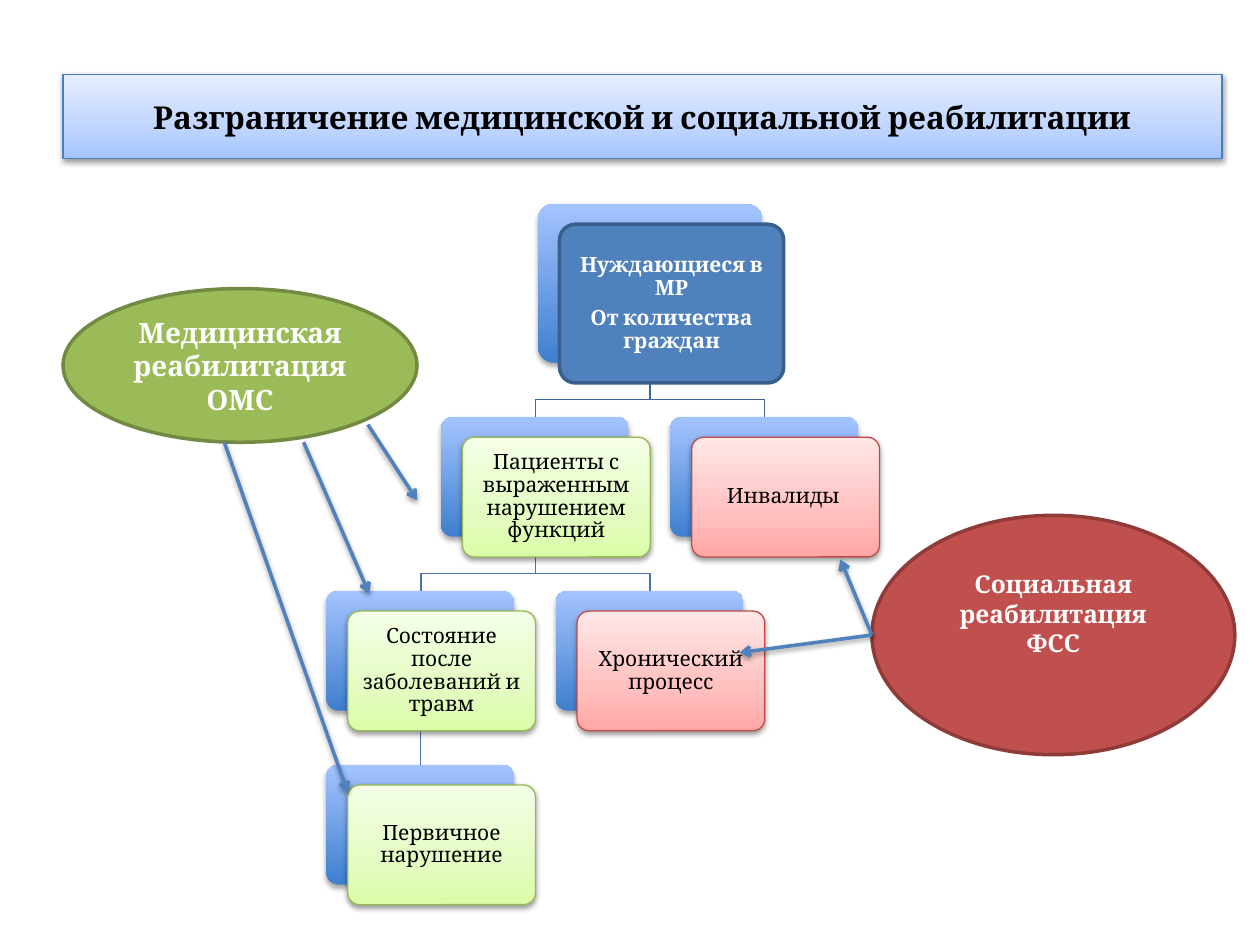
from lxml.etree import SubElement
from pptx import Presentation
from pptx.dml.color import RGBColor
from pptx.enum.shapes import MSO_CONNECTOR, MSO_SHAPE
from pptx.enum.text import MSO_ANCHOR, PP_ALIGN
from pptx.oxml.ns import qn
from pptx.util import Inches, Pt

BLACK = RGBColor(0x00, 0x00, 0x00)
WHITE = RGBColor(0xFF, 0xFF, 0xFF)
BLUE = RGBColor(0x4F, 0x81, 0xBD)
BLUE_EDGE = RGBColor(0x3A, 0x5F, 0x8C)
TITLE_EDGE = RGBColor(0x4B, 0x7E, 0xBC)
TOP_LINK = RGBColor(0x3F, 0x67, 0x97)
LOW_LINK = RGBColor(0x48, 0x75, 0xAC)
GREEN = RGBColor(0x9B, 0xBB, 0x59)
GREEN_EDGE = RGBColor(0x73, 0x8A, 0x42)
GREEN_CARD_EDGE = RGBColor(0x98, 0xB9, 0x55)
RED = RGBColor(0xC0, 0x50, 0x4D)
RED_EDGE = RGBColor(0x8E, 0x3B, 0x39)
RED_CARD_EDGE = RGBColor(0xBF, 0x4C, 0x48)

# Gradients run from bottom to top: (position in percent, colour)
BACK_GRAD = [(0, RGBColor(0x3F, 0x7F, 0xCE)), (100, RGBColor(0xA4, 0xC4, 0xFF))]
TITLE_GRAD = [(0, RGBColor(0xA4, 0xC4, 0xFF)), (35, RGBColor(0xBF, 0xD4, 0xFF)),
              (100, RGBColor(0xE6, 0xEE, 0xFF))]
GREEN_GRAD = [(0, RGBColor(0xDA, 0xFD, 0xA7)), (35, RGBColor(0xE4, 0xFC, 0xC2)),
              (100, RGBColor(0xF5, 0xFF, 0xE7))]
RED_GRAD = [(0, RGBColor(0xFF, 0xA6, 0xA5)), (35, RGBColor(0xFF, 0xC0, 0xBF)),
            (100, RGBColor(0xFF, 0xE7, 0xE7))]

FONT = "Cambria"
ROOT_SIZE, CARD_SIZE = (1.78, 1.26), (1.49, 0.95)
OFFSET_X, OFFSET_Y = 0.17, 0.16
ROW_GAP, ELBOW_DROP = 0.43, 0.29
ROW_1 = 1.62
ROW_2 = ROW_1 + ROOT_SIZE[1] + ROW_GAP
ROW_3 = ROW_2 + CARD_SIZE[1] + ROW_GAP
ROW_4 = ROW_3 + CARD_SIZE[1] + ROW_GAP
CARD_FORMAT = {"line_spacing": 0.9, "space_after": Pt(4.2)}


def set_shadow(sp, alpha=38, dist=1.6):
    spPr = sp.element.spPr
    effects = spPr.find(qn("a:effectLst"))
    if effects is None:
        effects = SubElement(spPr, qn("a:effectLst"))
    shadow = SubElement(effects, qn("a:outerShdw"), blurRad=str(Pt(3.1)),
                        dist=str(Pt(dist)), dir="5400000", rotWithShape="0")
    color = SubElement(shadow, qn("a:srgbClr"), val=str(BLACK))
    SubElement(color, qn("a:alpha"), val=str(alpha * 1000))


def set_gradient(sp, stops):
    sp.fill.gradient()
    sp.fill.gradient_angle = 90
    stop_list = sp.element.spPr.find(qn("a:gradFill")).find(qn("a:gsLst"))
    stop_list.clear()
    for pos, color in stops:
        stop = SubElement(stop_list, qn("a:gs"), pos=str(pos * 1000))
        SubElement(stop, qn("a:srgbClr"), val=str(color))


def add_box(s, kind, box, fill, edge=None, width=0.75):
    sp = s.shapes.add_shape(kind, *map(Inches, box))
    sp.shadow.inherit = False
    if isinstance(fill, list):
        set_gradient(sp, fill)
    else:
        sp.fill.solid()
        sp.fill.fore_color.rgb = fill
    if edge is None:
        sp.line.fill.background()
    else:
        sp.line.color.rgb = edge
        sp.line.width = Pt(width)
    return sp


def add_text(sp, lines, size, color, bold=False, frame=None, para=None):
    tf = sp.text_frame
    frame = {"word_wrap": True, "vertical_anchor": MSO_ANCHOR.MIDDLE, **(frame or {})}
    for name, value in frame.items():
        setattr(tf, name, value)
    for i, line in enumerate(lines):
        p = tf.add_paragraph() if i else tf.paragraphs[0]
        for name, value in {"alignment": PP_ALIGN.CENTER, **(para or {})}.items():
            setattr(p, name, value)
        r = p.add_run()
        r.text = line
        for name, value in {"name": FONT, "size": Pt(size), "bold": bold}.items():
            setattr(r.font, name, value)
        r.font.color.rgb = color


def add_card(s, x, y, size, lines, fill, edge, root=False):
    back = add_box(s, MSO_SHAPE.ROUNDED_RECTANGLE, (x, y, *size), BACK_GRAD)
    set_shadow(back, 35, 1.8)
    front = add_box(s, MSO_SHAPE.ROUNDED_RECTANGLE,
                    (x + OFFSET_X, y + OFFSET_Y, *size), fill, edge, 2 if root else 0.75)
    if not root:
        set_shadow(front)
    for sp in (back, front):
        sp.adjustments[0] = 0.1
    margins = {f"margin_{side}": Inches(0.05) for side in ("left", "right", "top", "bottom")}
    add_text(front, lines, 12, WHITE if root else BLACK, root, margins, CARD_FORMAT)


def add_line(s, start, end, color, width):
    cn = s.shapes.add_connector(MSO_CONNECTOR.STRAIGHT, *map(Inches, (*start, *end)))
    cn.line.color.rgb = color
    cn.line.width = Pt(width)
    SubElement(cn.element.spPr, qn("a:effectLst"))
    return cn


def add_arrow(s, start, end):
    cn = add_line(s, start, end, BLUE, 2)
    SubElement(cn.element.spPr.find(qn("a:ln")), qn("a:tailEnd"), type="arrow")
    set_shadow(cn)


def add_link(s, x1, y1, x2, color):
    y2 = y1 + ROW_GAP
    if x1 == x2:
        add_line(s, (x1, y1), (x2, y2), color, 0.75)
        return
    bend = y1 + ELBOW_DROP
    builder = s.shapes.build_freeform(Inches(x1), Inches(y1))
    points = [(x1, bend), (x2, bend), (x2, y2)]
    builder.add_line_segments([(Inches(x), Inches(y)) for x, y in points], close=False)
    sp = builder.convert_to_shape()
    sp.shadow.inherit = False
    sp.fill.background()
    sp.line.color.rgb = color
    sp.line.width = Pt(0.75)


def main():
    prs = Presentation()
    prs.slide_width, prs.slide_height = Inches(10), Inches(7.5)
    s = prs.slides.add_slide(prs.slide_layouts[6])

    # Tree links
    root_bottom, row_2_bottom, row_3_bottom = (y - ROW_GAP for y in (ROW_2, ROW_3, ROW_4))
    for link in [(5.16, root_bottom, 6.07, TOP_LINK), (5.16, root_bottom, 4.25, TOP_LINK),
                 (4.25, row_2_bottom, 5.16, LOW_LINK), (4.25, row_2_bottom, 3.34, LOW_LINK),
                 (3.34, row_3_bottom, 3.34, LOW_LINK)]:
        add_link(s, *link)

    # Tree cards
    add_card(s, 4.27, ROW_1, ROOT_SIZE, ["Нуждающиеся в МР", "От количества граждан"],
             BLUE, BLUE_EDGE, root=True)
    green, red = (GREEN_GRAD, GREEN_CARD_EDGE), (RED_GRAD, RED_CARD_EDGE)
    for x, y, text, style in [
            (3.5, ROW_2, "Пациенты с выраженным нарушением функций", green),
            (2.59, ROW_3, "Состояние после заболеваний и травм", green),
            (2.59, ROW_4, "Первичное нарушение", green),
            (4.41, ROW_3, "Хронический процесс", red),
            (5.32, ROW_2, "Инвалиды ", red)]:
        add_card(s, x, y, CARD_SIZE, [text], *style)

    # Title
    title = add_box(s, MSO_SHAPE.RECTANGLE, (0.5, 0.59, 9.2, 0.67), TITLE_GRAD, TITLE_EDGE)
    set_shadow(title)
    add_text(title, ["Разграничение медицинской и социальной реабилитации"], 18, BLACK, True)

    # Funding ovals
    medical = add_box(s, MSO_SHAPE.OVAL, (0.5, 2.29, 2.81, 1.22), GREEN, GREEN_EDGE, 2)
    add_text(medical, ["Медицинская реабилитация", "ОМС"], 16, WHITE, True)
    social = add_box(s, MSO_SHAPE.OVAL, (6.92, 4.09, 2.88, 1.9), RED, RED_EDGE, 2)
    add_text(social, ["Социальная реабилитация", "ФСС"], 14, WHITE, True,
             {"margin_bottom": Inches(0.39)})

    # Arrows from the ovals to the groups they cover
    for start, end in [((6.92, 5.04), (6.67, 4.44)), ((6.92, 5.04), (5.87, 5.18)),
                       ((2.92, 3.37), (3.31, 3.97)), ((1.78, 3.51), (2.76, 6.29)),
                       ((2.41, 3.51), (2.93, 4.71))]:
        add_arrow(s, start, end)

    prs.save("out.pptx")


if __name__ == "__main__":
    main()
